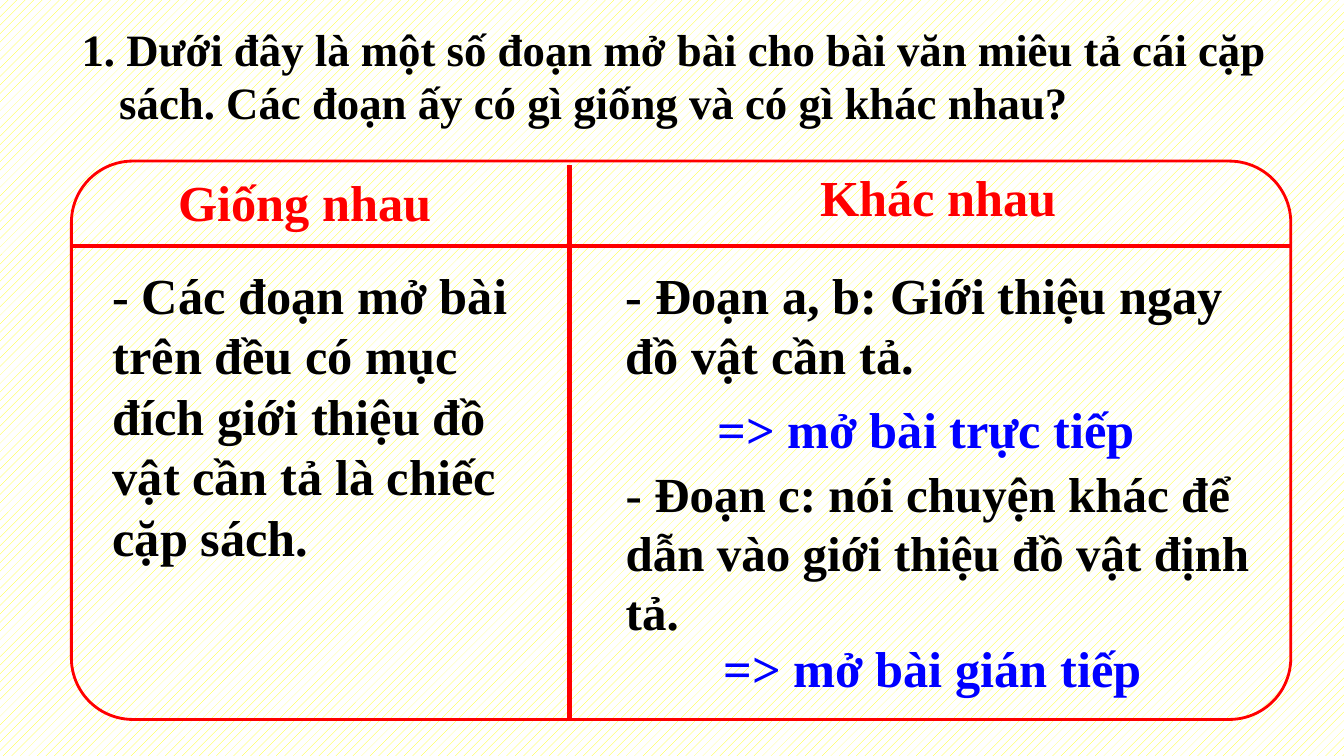
import pptx
import pptx.util
import pptx.dml.color
import pptx.enum.dml
import pptx.enum.shapes
import pptx.enum.text
import lxml.etree

Cm = pptx.util.Cm
RED = pptx.dml.color.RGBColor(0xFF, 0x00, 0x00)
BLUE = pptx.dml.color.RGBColor(0x00, 0x00, 0xFF)
BLACK = pptx.dml.color.RGBColor(0x00, 0x00, 0x00)
YELLOW = pptx.dml.color.RGBColor(0xFF, 0xFF, 0x00)
WHITE = pptx.dml.color.RGBColor(0xFF, 0xFF, 0xFF)

HEADER_H = 2.14
DIVIDER_X = 12.55
LINE_H = 1.8


def write(sp, text, size, color):
    tf = sp.text_frame
    frame_format = {
        "word_wrap": True,
        "auto_size": pptx.enum.text.MSO_AUTO_SIZE.NONE,
        "vertical_anchor": pptx.enum.text.MSO_ANCHOR.TOP,
    }
    for name, value in frame_format.items():
        setattr(tf, name, value)
    p = tf.paragraphs[0]
    p.alignment = pptx.enum.text.PP_ALIGN.LEFT
    r = p.add_run()
    r.text = text
    font_format = {"name": "Times New Roman", "size": pptx.util.Pt(size), "bold": True}
    for name, value in font_format.items():
        setattr(r.font, name, value)
    r.font.color.rgb = color
    return p


def add_text(slide, box, text, color=BLACK, size=36):
    sp = slide.shapes.add_textbox(*(Cm(v) for v in box))
    write(sp, text, size, color)


def add_rule(group, x1, y1, x2, y2):
    line = group.shapes.add_connector(
        pptx.enum.shapes.MSO_CONNECTOR.STRAIGHT, Cm(x1), Cm(y1), Cm(x2), Cm(y2))
    line.line.color.rgb = RED
    line.line.width = pptx.util.Pt(3)
    lxml.etree.SubElement(line._element.spPr, pptx.oxml.ns.qn("a:effectLst"))


def add_question(slide, box):
    sp = slide.shapes.title
    for name, value in zip(("left", "top", "width", "height"), box):
        setattr(sp, name, Cm(value))
    p = write(sp, "1. Dưới đây là một số đoạn mở bài cho bài văn miêu tả cái cặp sách. "
              "Các đoạn ấy có gì giống và có gì khác nhau?", 32, BLACK)
    hang = Cm(0.95)
    pPr = p._p.get_or_add_pPr()
    pPr.set("marL", str(hang))
    pPr.set("indent", str(-hang))


def add_frame(slide, box):
    """Rounded outline split by a header rule and a column rule."""
    x, y, w, h = box
    group = slide.shapes.add_group_shape()
    sp = group.shapes.add_shape(
        pptx.enum.shapes.MSO_SHAPE.ROUNDED_RECTANGLE, *(Cm(v) for v in box))
    sp.adjustments[0] = 0.11
    sp.shadow.inherit = False
    sp.fill.background()
    sp.line.color.rgb = RED
    sp.line.width = pptx.util.Pt(2)
    add_rule(group, x, y + HEADER_H, x + w, y + HEADER_H)
    add_rule(group, x + DIVIDER_X, y + 0.1, x + DIVIDER_X, y + h)


def add_similarities(slide, box):
    x, y, w, h = box
    add_text(slide, (x + 2.44, y + 0.13, 7.67, LINE_H), "Giống nhau", RED)
    add_text(slide, (x + 0.79, y + 2.47, 10.59, 7.95),
             "- Các đoạn mở bài trên đều có mục đích giới thiệu đồ vật cần tả "
             "là chiếc cặp sách.")


def add_differences(slide, box):
    x, y, w, h = box
    add_text(slide, (x + 6.07, y, 7.67, LINE_H), "Khác nhau", RED)
    add_text(slide, (x + 1.17, y + 2.47, 16.81, 3.33),
             "- Đoạn a, b: Giới thiệu ngay đồ vật cần tả.")
    add_text(slide, (x + 3.48, y + 5.85, 14.81, LINE_H), "=> mở bài trực tiếp", BLUE)
    add_text(slide, (x + 1.17, y + 7.5, 16.81, 4.75),
             "- Đoạn c: nói chuyện khác để dẫn vào giới thiệu đồ vật định tả.", size=35)
    add_text(slide, (x + 3.63, y + 11.87, 14.81, LINE_H), "=> mở bài gián tiếp", BLUE)


def add_comparison(slide, box):
    x, y, w, h = box
    add_frame(slide, box)
    add_similarities(slide, (x, y, DIVIDER_X, h))
    add_differences(slide, (x + DIVIDER_X, y, w - DIVIDER_X, h))


def main():
    prs = pptx.Presentation()
    prs.slide_width, prs.slide_height = Cm(33.87), Cm(19.05)
    slide = prs.slides.add_slide(prs.slide_layouts[5])
    fill = slide.background.fill
    fill.patterned()
    fill.pattern = pptx.enum.dml.MSO_PATTERN.PERCENT_20
    fill.fore_color.rgb = YELLOW
    fill.back_color.rgb = WHITE
    add_question(slide, (1.8, 0.41, 32.06, 3))
    add_comparison(slide, (1.8, 4.06, 30.73, 14.07))
    prs.save("out.pptx")


if __name__ == "__main__":
    main()
